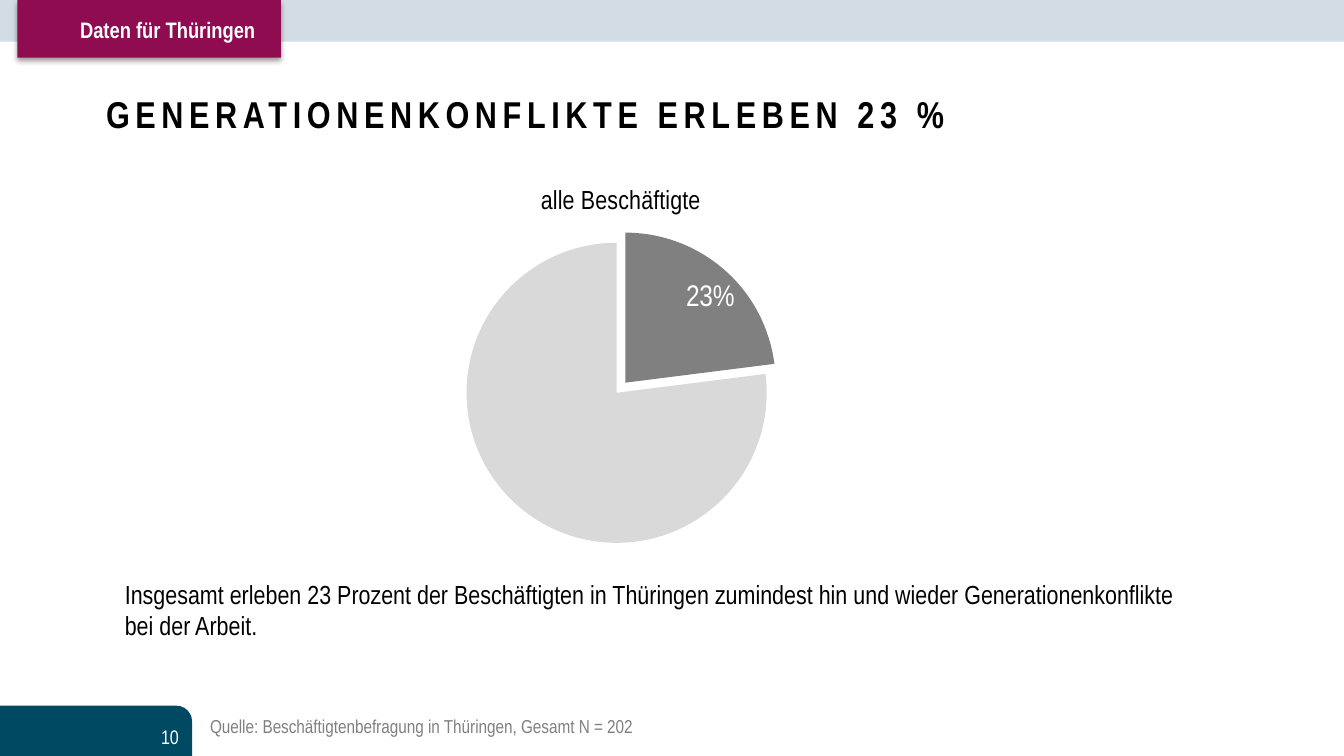
from copy import deepcopy
from lxml import etree
from pptx import Presentation
from pptx.chart.data import CategoryChartData
from pptx.dml.color import RGBColor
from pptx.enum.chart import XL_CHART_TYPE as CT, XL_LABEL_POSITION as LP
from pptx.enum.shapes import MSO_SHAPE
from pptx.enum.text import MSO_ANCHOR as ANC, MSO_AUTO_SIZE as FIT, PP_ALIGN as AL
from pptx.oxml import parse_xml
from pptx.oxml.ns import nsdecls, qn
from pptx.util import Cm, Pt

FONT = "Arial Narrow"
COLORS = {
    "band": "D3DCE4", "petrol": "004963", "berry": "8E0C4F",
    "black": "000000", "white": "FFFFFF",
    "conflict": "808080", "rest": "D9D9D9",
}


def rgb(name):
    return RGBColor.from_string(COLORS[name])


def style(font, size, color, bold=False):
    font.name = FONT
    font.size = Pt(size)
    font.bold = bold
    font.color.rgb = rgb(color)


prs = Presentation()
prs.slide_width, prs.slide_height = Cm(25.4), Cm(14.29)
s = prs.slides.add_slide(prs.slide_layouts[5])

blocks = [
    (MSO_SHAPE.RECTANGLE, 0, 0, 25.4, 0.79, "band"),
    (MSO_SHAPE.ROUND_1_RECTANGLE, 0, 13.34, 3.63, 0.95, "petrol"),
    (MSO_SHAPE.RECTANGLE, 0.33, 0, 4.98, 1.09, "berry"),
]
for kind, x, y, w, h, color in blocks:
    sp = s.shapes.add_shape(kind, Cm(x), Cm(y), Cm(w), Cm(h))
    sp.fill.solid()
    sp.fill.fore_color.rgb = rgb(color)
    sp.line.fill.background()
    sp.shadow.inherit = False
    if kind == MSO_SHAPE.ROUND_1_RECTANGLE:
        sp.adjustments[0] = 0.31

effects = sp._element.spPr.find(qn("a:effectLst"))
shadow = etree.SubElement(effects, qn("a:outerShdw"), blurRad=str(Pt(3.1)),
                          dist=str(Pt(1.6)), dir="5400000", rotWithShape="0")
tint = etree.SubElement(shadow, qn("a:srgbClr"), val=COLORS["black"])
etree.SubElement(tint, qn("a:alpha"), val="38000")

title = s.shapes.title
title.left, title.top, title.width, title.height = Cm(1.75), Cm(0.76), Cm(21.9), Cm(2.77)
tf = title.text_frame
tf.auto_size = FIT.NONE
tf.vertical_anchor = ANC.MIDDLE
p = tf.paragraphs[0]
p.alignment = AL.LEFT
r = p.add_run()
r.text = "GENERATIONENKONFLIKTE ERLEBEN 23 %"
style(r.font, 20, "black", bold=True)
r.font._element.set("spc", "300")

texts = [
    ("10", 0.86, 13.54, 2.77, 0.76, 10.5, "white", False, AL.RIGHT, ANC.MIDDLE),
    ("Insgesamt erleben 23 Prozent der Beschäftigten in Thüringen zumindest "
     "hin und wieder Generationenkonflikte bei der Arbeit.",
     2.11, 10.8, 20.68, 2.18, 14, "black", False, AL.LEFT, ANC.TOP),
    ("Quelle: Beschäftigtenbefragung in Thüringen, Gesamt N = 202",
     3.84, 13.39, 18.67, 0.66, 10, "conflict", False, AL.LEFT, ANC.TOP),
    ("Daten für Thüringen", 0.86, 0.18, 4.22, 0.76, 12, "white", True, AL.RIGHT, ANC.TOP),
]
for text, x, y, w, h, size, color, bold, align, anchor in texts:
    tf = s.shapes.add_textbox(Cm(x), Cm(y), Cm(w), Cm(h)).text_frame
    tf.word_wrap = True
    tf.vertical_anchor = anchor
    if text.startswith("Quelle"):
        tf.margin_left = tf.margin_right = Cm(0.13)
    p = tf.paragraphs[0]
    p.alignment = align
    r = p.add_run()
    r.text = text
    style(r.font, size, color, bold)

data = CategoryChartData(number_format="0%")
data.categories = ["1"]
data.add_series("Series 1", [0.23, 0.77])
chart = s.shapes.add_chart(CT.PIE, Cm(3.63), Cm(3.15), Cm(16.21), Cm(7.44), data).chart
style(chart.font, 10, "black")
chart.has_legend = False
chart.has_title = True
r = chart.chart_title.text_frame.paragraphs[0].add_run()
r.text = "alle Beschäftigte"
style(r.font, 14, "black")

plot = chart.plots[0]
plot.vary_by_categories = True
series = plot.series[0]
fmt = series.points[0].format
fmt.fill.solid()
fmt.fill.fore_color.rgb = rgb("conflict")
fmt.line.fill.background()
conflict = series._element.find(qn("c:dPt"))
rest = deepcopy(conflict)
rest.find(qn("c:idx")).set("val", "1")
rest.find(".//" + qn("a:srgbClr")).set("val", COLORS["rest"])
conflict.addnext(rest)
conflict.find(qn("c:spPr")).addprevious(
    parse_xml(f'<c:explosion {nsdecls("c")} val="9"/>'))

labels = series.data_labels
labels.show_value = True
labels.number_format = "0%"
labels.number_format_is_linked = False
labels.position = LP.BEST_FIT
style(labels.font, 16, "white")
labels._element.insert(0, parse_xml(
    f'<c:dLbl {nsdecls("c")}><c:idx val="1"/><c:delete val="1"/></c:dLbl>'))

area = chart._chartSpace.chart.plotArea
for old in area.findall(qn("c:layout")):
    area.remove(old)
layout = etree.Element(qn("c:layout"))
manual = etree.SubElement(layout, qn("c:manualLayout"))
for tag, val in [("layoutTarget", "inner"), ("xMode", "edge"), ("yMode", "edge"),
                 ("x", "0.32"), ("y", "0.19"), ("w", "0.35"), ("h", "0.77")]:
    etree.SubElement(manual, qn(f"c:{tag}"), val=val)
area.insert(0, layout)

prs.save("out.pptx")
